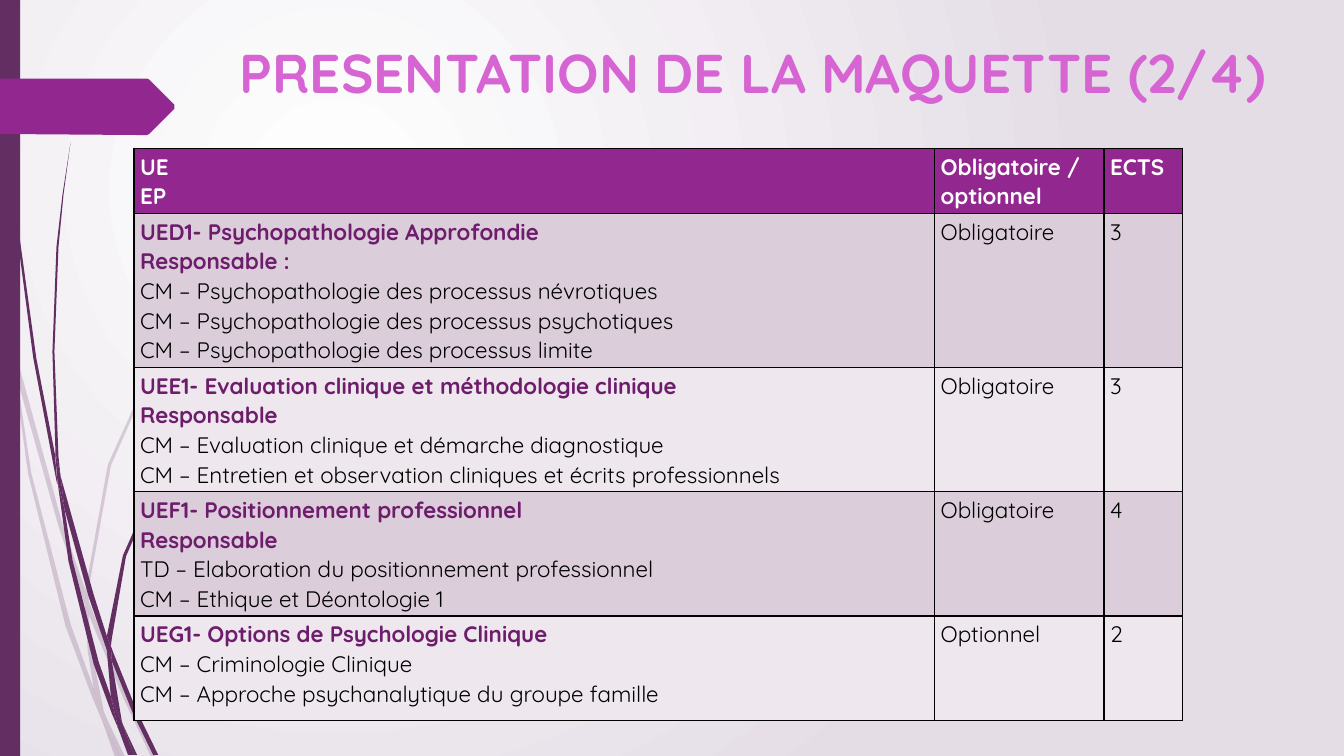
from dataclasses import dataclass

from lxml.etree import SubElement
from pptx import Presentation
from pptx.dml.color import RGBColor
from pptx.enum.shapes import MSO_SHAPE as SHAPE
from pptx.enum.text import MSO_ANCHOR as ANCHOR, MSO_AUTO_SIZE as AUTO, PP_ALIGN as ALIGN
from pptx.oxml import parse_xml
from pptx.oxml.ns import nsdecls, qn
from pptx.util import Pt

TITLE = "PRESENTATION DE LA MAQUETTE (2/4)"
HEADER = (["UE", "EP"], "Obligatoire / optionnel", "ECTS")
UNITS = [
    (["UED1- Psychopathologie Approfondie", "Responsable :"],
     ["CM – Psychopathologie des processus névrotiques",
      "CM – Psychopathologie des processus psychotiques",
      "CM – Psychopathologie des processus limite"],
     "Obligatoire", "3"),
    (["UEE1- Evaluation clinique et méthodologie clinique", "Responsable"],
     ["CM – Evaluation clinique et démarche diagnostique",
      "CM – Entretien et observation cliniques et écrits professionnels"],
     "Obligatoire", "3"),
    (["UEF1- Positionnement professionnel", "Responsable"],
     ["TD – Elaboration du positionnement professionnel",
      "CM – Ethique et Déontologie 1"],
     "Obligatoire", "4"),
    (["UEG1- Options de Psychologie Clinique"],
     ["CM – Criminologie Clinique",
      "CM – Approche psychanalytique du groupe famille"],
     "Optionnel", "2"),
]

PALE_BLADES = [
    [(11, 350), (9, 322), (0, 282), (0, 299), (10, 344)],
    [(58, 522), (84, 599), (85, 586), (62, 520), (14, 345), (17, 376)],
    [(92, 607), (88, 596), (88, 610), (123, 694), (150, 751), (155, 751), (127, 692)],
    [(119, 751), (124, 751), (105, 711)],
    [(93, 683), (70, 619), (31, 469), (17, 376), (11, 350), (28, 470), (65, 621),
     (92, 693), (101, 714), (99, 707)],
    [(84, 599), (87, 646), (93, 683), (96, 692), (105, 711), (103, 706), (91, 646),
     (88, 610), (88, 608)],
    [(88, 584), (110, 462), (160, 349), (229, 245), (268, 198), (290, 175), (312, 154),
     (312, 153), (289, 175), (268, 197), (228, 244), (158, 348), (107, 461), (85, 584),
     (85, 586), (88, 596)],
    [(101, 714), (114, 751), (119, 751)],
    [(88, 608), (88, 610), (88, 596), (85, 586), (84, 599)],
    [(96, 692), (93, 683), (99, 707), (101, 714), (119, 751), (105, 711)],
]
DARK_BLADES = [
    [(7, 110), (17, 233), (33, 355), (56, 477), (57, 481), (55, 457), (55, 453), (36, 355),
     (19, 232), (8, 109), (5, 48), (4, 0), (3, 0), (4, 48)],
    [(88, 592), (106, 645), (106, 633), (106, 631), (93, 590), (60, 472), (64, 505)],
    [(113, 649), (110, 641), (111, 656), (132, 708), (152, 749), (157, 749), (136, 706)],
    [(110, 691), (98, 657), (72, 556), (64, 505), (57, 477), (68, 557), (93, 659),
     (111, 708), (117, 722), (116, 717)],
    [(60, 472), (58, 453), (54, 349), (58, 245), (63, 193), (70, 141), (62, 193), (56, 245),
     (52, 349), (55, 449)],
    [(133, 749), (136, 749), (122, 719)],
    [(57, 477), (64, 505), (60, 472), (55, 449), (55, 453)],
    [(111, 633), (125, 552), (158, 476), (205, 406), (231, 374), (245, 359), (261, 344),
     (260, 344), (245, 358), (231, 373), (204, 405), (156, 474), (122, 551), (106, 631),
     (110, 641)],
    [(117, 722), (127, 749), (131, 749)],
    [(106, 645), (110, 691), (116, 706), (122, 719), (121, 716), (111, 656), (109, 651)],
    [(106, 645), (109, 651), (111, 656), (110, 641), (106, 631), (106, 633)],
    [(116, 706), (110, 691), (116, 717), (117, 722), (130, 749), (133, 749), (122, 719)],
]
ARROW = [(173, 108), (148, 133), (146, 134), (136, 134), (0, 133), (0, 78),
         (146, 78), (148, 79), (173, 104)]

SLIDE = (1333, 750)
TITLE_BOX = (198, 34, 1097, 140)
BAND = (0, 0, 20, 750)
TABLE_BOX = (133, 147, 1039, 545)
COLUMNS = (794, 168, 78)
ROWS = (57, 133, 107, 114, 104)
CELL_INSET = (6, 3)
PX = 9144


@dataclass(frozen=True)
class Theme:
    font: str = "Quicksand"
    title_size: int = 39
    body_size: int = 16
    spacing: float = 1.06
    title: str = "D665D3"
    header: str = "92278F"
    heading: str = "6D1D6B"
    blade: str = "632E62"
    rows: tuple = ("DCCDDB", "EEE8EE")
    background: tuple = ("FFFFFF", "E4DDE6")
    white: str = "FFFFFF"
    black: str = "000000"


T = Theme()


def emu(*lengths):
    return [n * PX for n in lengths]


def color(code):
    return RGBColor.from_string(code)


def write(p, text, size=T.body_size, fill=T.black, bold=False, align=ALIGN.LEFT, spacing=T.spacing):
    p.alignment = align
    p.line_spacing = spacing
    r = p.add_run()
    r.text = text
    r.font.name = T.font
    r.font.size = Pt(size)
    r.font.bold = bold
    r.font.color.rgb = color(fill)


def paint(sp, fill, opacity=100):
    sp.shadow.inherit = False
    sp.fill.solid()
    sp.fill.fore_color.rgb = color(fill)
    sp.line.fill.background()
    if opacity < 100:
        clr = sp.fill._xPr.find(".//" + qn("a:srgbClr"))
        SubElement(clr, qn("a:alpha")).set("val", str(opacity * 1000))


def add_outline(s, points, fill, opacity=100):
    builder = s.shapes.build_freeform(*points[0], scale=PX)
    builder.add_line_segments(points[1:])
    paint(builder.convert_to_shape(), fill, opacity)


def set_background(s):
    fill = s.background.fill
    fill.gradient()
    for stop, code in zip(fill.gradient_stops, T.background):
        stop.color.rgb = color(code)
    lin = s._element.find(".//" + qn("a:lin"))
    lin.getparent().replace(lin, parse_xml(
        f'<a:path {nsdecls("a")} path="circle">'
        '<a:fillToRect l="50000" t="50000" r="100000" b="100000"/></a:path>'))


def fill_cell(cell, lines, fill):
    cell.margin_left, cell.margin_top = cell.margin_right, cell.margin_bottom = emu(*CELL_INSET)
    cell.vertical_anchor = ANCHOR.TOP
    cell.fill.solid()
    cell.fill.fore_color.rgb = color(fill)
    tf = cell.text_frame
    for i, (text, style) in enumerate(lines):
        write(tf.add_paragraph() if i else tf.paragraphs[0], text, **style)
    for i, side in enumerate("LRTB"):
        cell._tc.tcPr.insert(i, parse_xml(
            f'<a:ln{side} {nsdecls("a")} w="12700"><a:solidFill>'
            f'<a:srgbClr val="{T.black}"/></a:solidFill></a:ln{side}>'))


def add_units(s):
    table = s.shapes.add_table(len(ROWS), len(COLUMNS), *emu(*TABLE_BOX)).table
    for column, width in zip(table.columns, emu(*COLUMNS)):
        column.width = width
    for row, height in zip(table.rows, emu(*ROWS)):
        row.height = height
    head = dict(fill=T.white, bold=True)
    names, kind, credits = HEADER
    grid = [([(n, head) for n in names], [(kind, head)], [(credits, head)])]
    for headings, courses, kind, credits in UNITS:
        lines = [(h, dict(fill=T.heading, bold=True)) for h in headings]
        lines += [(c, {}) for c in courses]
        grid.append((lines, [(kind, {})], [(credits, {})]))
    for i, row in enumerate(grid):
        fill = T.rows[(i - 1) % 2] if i else T.header
        for j, lines in enumerate(row):
            fill_cell(table.cell(i, j), lines, fill)


def add_title(s):
    sp = s.shapes.title
    sp.left, sp.top, sp.width, sp.height = emu(*TITLE_BOX)
    tf = sp.text_frame
    tf.word_wrap = True
    tf.auto_size = AUTO.NONE
    tf.vertical_anchor = ANCHOR.TOP
    write(tf.paragraphs[0], TITLE, size=T.title_size, fill=T.title, bold=True,
          align=ALIGN.CENTER, spacing=1.0)


def main():
    prs = Presentation()
    prs.slide_width, prs.slide_height = emu(*SLIDE)
    s = prs.slides.add_slide(prs.slide_layouts[5])
    set_background(s)
    for blades, opacity in ((PALE_BLADES, 20), (DARK_BLADES, 100)):
        for points in blades:
            add_outline(s, points, T.blade, opacity)
    paint(s.shapes.add_shape(SHAPE.RECTANGLE, *emu(*BAND)), T.blade)
    add_outline(s, ARROW, T.header)
    add_title(s)
    add_units(s)
    prs.save("out.pptx")


if __name__ == "__main__":
    main()
